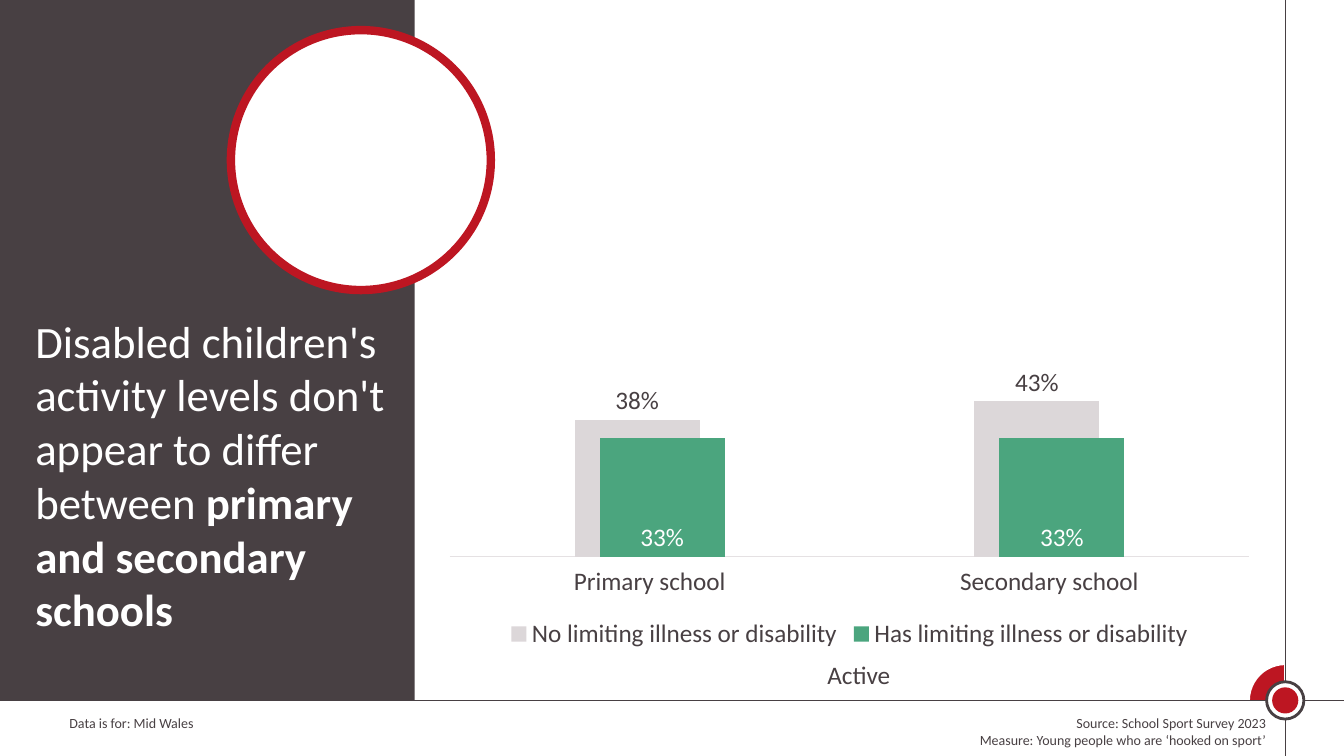
"""Build the slide on activity levels of disabled children by school type."""
from dataclasses import dataclass
from typing import Optional

from lxml.etree import SubElement
from pptx import Presentation
from pptx.chart.data import CategoryChartData
from pptx.dml.color import RGBColor
from pptx.enum.chart import XL_CHART_TYPE as ChartType
from pptx.enum.chart import XL_LABEL_POSITION as LabelPos
from pptx.enum.chart import XL_LEGEND_POSITION as LegendPos
from pptx.enum.chart import XL_TICK_LABEL_POSITION as TickLabelPos
from pptx.enum.chart import XL_TICK_MARK as TickMark
from pptx.enum.shapes import MSO_CONNECTOR as Connector
from pptx.enum.shapes import MSO_SHAPE as Shape
from pptx.enum.text import PP_ALIGN as Align
from pptx.oxml.ns import qn
from pptx.util import Cm, Pt

DARK = RGBColor(0x48, 0x40, 0x43)
RED = RGBColor(0xBD, 0x16, 0x22)
WHITE = RGBColor(0xFF, 0xFF, 0xFF)
GREY = RGBColor(0xDC, 0xD7, 0xD9)
AXIS_GREY = RGBColor(0xE5, 0xE1, 0xE3)
GREEN = RGBColor(0x4B, 0xA5, 0x7E)
FONT = "Calibri"
WIDTH, HEIGHT = 33.87, 19.05
CROSS_X, CROSS_Y = 32.39, 17.65


@dataclass
class Block:
    kind: Shape
    box: tuple[float, float, float, float]
    fill: RGBColor
    line: Optional[RGBColor] = None
    weight: float = 0
    angles: tuple[float, ...] = ()


@dataclass
class Label:
    box: tuple[float, float, float, float]
    paragraphs: list[list[tuple[str, bool]]]
    size: int = 10
    color: RGBColor = DARK
    align: Align = Align.LEFT


@dataclass
class Series:
    name: str
    values: tuple[float, ...]
    color: RGBColor
    label_color: RGBColor
    position: LabelPos


def centred(d: float) -> tuple[float, float, float, float]:
    """Return a square box of side d centred where the rules cross."""
    return CROSS_X - d / 2, CROSS_Y - d / 2, d, d


PIE = Block(Shape.PIE, centred(1.83), RED, WHITE, 1.5, (106.62, 162))
RULES = [(CROSS_X, 0, CROSS_X, HEIGHT), (0, CROSS_Y, WIDTH, CROSS_Y)]
BLOCKS = [
    Block(Shape.OVAL, centred(0.94), WHITE, DARK, 2),
    Block(Shape.OVAL, centred(0.66), RED),
    Block(Shape.RECTANGLE, (0, 0, 10.45, CROSS_Y), DARK),
    Block(Shape.OVAL, (5.82, 0.76, 6.55, 6.55), WHITE, RED, 6),
]
LABELS = [
    Label((1.5, 17.88, 11.15, 0.69), [[("Data is for: Mid Wales", False)]]),
    Label((15.72, 17.88, 16.43, 1.12),
          [[("Source: School Sport Survey 2023", False)],
           [("Measure: Young people who are ‘hooked on sport’", False)]],
          align=Align.RIGHT),
    Label((0.64, 7.77, 9.42, 8.46),
          [[("Disabled children's activity levels don't appear to differ between ", False),
            ("primary and secondary schools", True)]], 32, WHITE),
    Label((20.6, 16.48, 3.1, 1.02), [[("Active", False)]], 18),
]
CHART_BOX = (10.92, 4.7, 20.98, 11.79)
CATEGORIES = ("Primary school", "Secondary school")
SERIES = [
    Series("No limiting illness or disability", (0.38, 0.43), GREY, DARK, LabelPos.OUTSIDE_END),
    Series("Has limiting illness or disability", (0.33, 0.33), GREEN, WHITE, LabelPos.INSIDE_BASE),
]


def set_all(target, **values) -> None:
    """Set each given attribute on the target."""
    for name, value in values.items():
        setattr(target, name, value)


def style_font(font, size: int, color: RGBColor, bold: bool = False) -> None:
    """Apply the slide font with the given format."""
    set_all(font, name=FONT, size=Pt(size), bold=bold)
    font.color.rgb = color


def add_block(s, block: Block) -> None:
    """Draw a filled preset shape."""
    sp = s.shapes.add_shape(block.kind, *map(Cm, block.box))
    sp.shadow.inherit = False
    sp.fill.solid()
    sp.fill.fore_color.rgb = block.fill
    for i, angle in enumerate(block.angles):
        sp.adjustments[i] = angle
    if block.line is None:
        sp.line.fill.background()
    else:
        sp.line.color.rgb = block.line
        sp.line.width = Pt(block.weight)


def add_rule(s, ends: tuple[float, ...]) -> None:
    """Draw a thin straight line."""
    line = s.shapes.add_connector(Connector.STRAIGHT, *map(Cm, ends))
    line.line.color.rgb = DARK
    line.line.width = Pt(1)
    SubElement(line._element.spPr, qn("a:effectLst"))


def add_label(s, label: Label) -> None:
    """Draw a wrapped text box."""
    tf = s.shapes.add_textbox(*map(Cm, label.box)).text_frame
    tf.word_wrap = True
    for i, runs in enumerate(label.paragraphs):
        p = tf.add_paragraph() if i else tf.paragraphs[0]
        p.alignment = label.align
        for text, bold in runs:
            r = p.add_run()
            r.text = text
            style_font(r.font, label.size, label.color, bold)


def add_activity_chart(s) -> None:
    """Draw the overlapping column chart."""
    data = CategoryChartData(number_format="0%")
    data.categories = CATEGORIES
    for series in SERIES:
        data.add_series(series.name, series.values)
    chart = s.shapes.add_chart(ChartType.COLUMN_CLUSTERED, *map(Cm, CHART_BOX), data).chart
    set_all(chart, has_title=False, has_legend=True)
    style_font(chart.font, 18, DARK)
    set_all(chart.legend, position=LegendPos.BOTTOM, include_in_layout=False)
    style_font(chart.legend.font, 18, DARK)
    set_all(chart.value_axis, visible=False, has_major_gridlines=False,
            minimum_scale=0, maximum_scale=1)
    axis = chart.category_axis
    set_all(axis, major_tick_mark=TickMark.NONE, minor_tick_mark=TickMark.NONE,
            tick_label_position=TickLabelPos.LOW)
    style_font(axis.tick_labels.font, 18, DARK)
    axis.format.line.color.rgb = AXIS_GREY
    axis.format.line.width = Pt(0.75)
    plot = chart.plots[0]
    set_all(plot, gap_width=200, overlap=80, vary_by_categories=False)
    for bars, series in zip(plot.series, SERIES):
        bars.format.fill.solid()
        bars.format.fill.fore_color.rgb = series.color
        labels = bars.data_labels
        set_all(labels, show_value=True, number_format="0%",
                number_format_is_linked=False, position=series.position)
        style_font(labels.font, 18, series.label_color)


def main() -> None:
    """Assemble and save the slide."""
    prs = Presentation()
    set_all(prs, slide_width=Cm(WIDTH), slide_height=Cm(HEIGHT))
    s = prs.slides.add_slide(prs.slide_layouts[6])
    add_block(s, PIE)
    for ends in RULES:
        add_rule(s, ends)
    for block in BLOCKS:
        add_block(s, block)
    for label in LABELS:
        add_label(s, label)
    add_activity_chart(s)
    prs.save("out.pptx")


if __name__ == "__main__":
    main()
